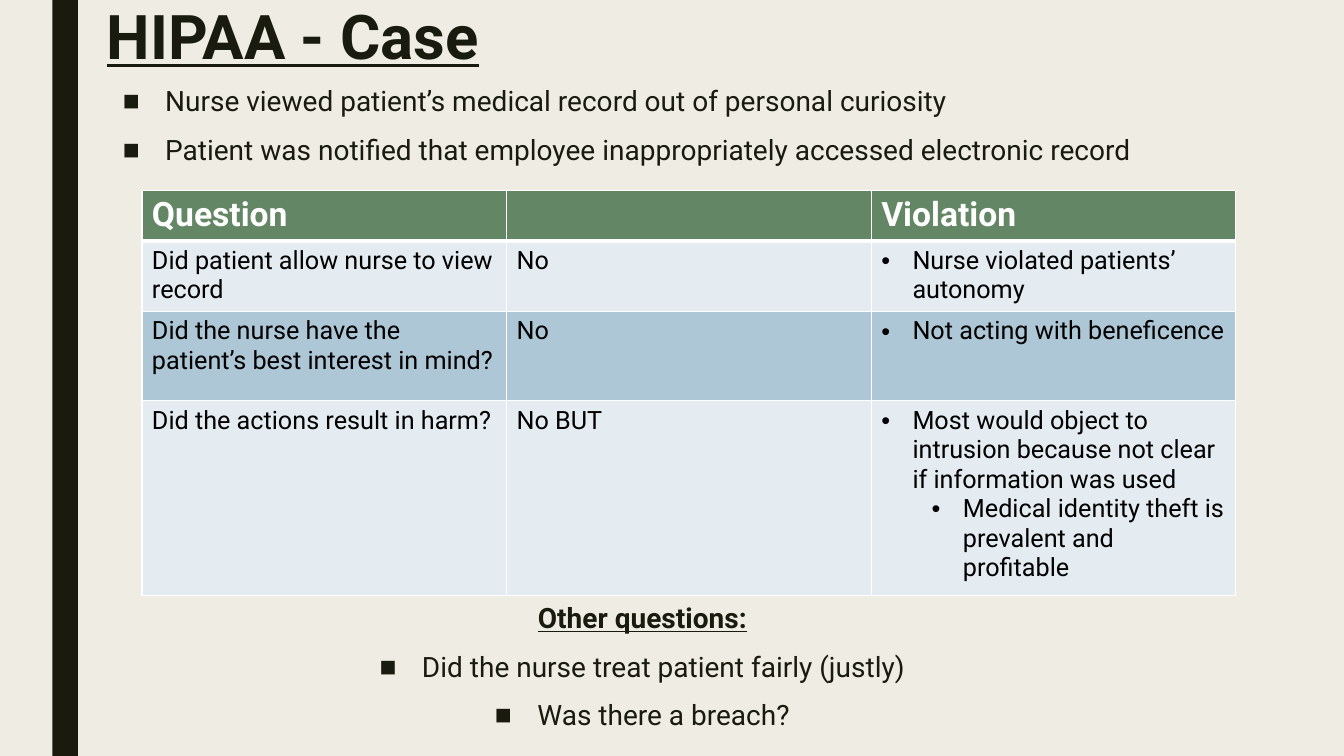
from lxml.etree import SubElement
from pptx import Presentation
from pptx.dml.color import RGBColor
from pptx.enum.shapes import MSO_SHAPE
from pptx.enum.text import PP_ALIGN
from pptx.oxml.ns import qn
from pptx.util import Emu, Inches, Pt

INK, PAPER, WHITE, BLACK = "191B0E", "EFEDE3", "FFFFFF", "000000"
GREEN, PALE, BLUE = "638764", "E4ECF1", "ADC7D6"


def colour(value):
    return RGBColor.from_string(value)


def write(paragraph, text, size=20, ink=INK, bold=False, underline=False,
          align=PP_ALIGN.LEFT, line=None, before=0, after=0,
          bullet=None, indent=0, hang=0):
    paragraph.alignment = align
    paragraph.line_spacing = line
    paragraph.space_before, paragraph.space_after = Pt(before), Pt(after)
    if bullet:
        properties = paragraph._p.get_or_add_pPr()
        properties.set("marL", str(Inches(indent)))
        properties.set("indent", str(-Inches(hang)))
        SubElement(properties, qn("a:buFont"), typeface="Arial")
        SubElement(properties, qn("a:buChar"), char=bullet)
    run = paragraph.add_run()
    run.text = text
    font = run.font
    font.name, font.size, font.bold, font.underline = "Roboto", Pt(size), bold, underline
    font.color.rgb = colour(ink)


class Page:
    def __init__(self, deck):
        self.deck = deck
        self.slide = deck.slides.add_slide(deck.slide_layouts[6])
        self.slide.background.fill.solid()
        self.slide.background.fill.fore_color.rgb = colour(PAPER)

    def across(self, percent):
        return Emu(round(self.deck.slide_width * percent / 100))

    def down(self, percent):
        return Emu(round(self.deck.slide_height * percent / 100))

    def area(self, left, top, width, height):
        return self.across(left), self.down(top), self.across(width), self.down(height)

    def bar(self, *area, fill):
        bar = self.slide.shapes.add_shape(MSO_SHAPE.RECTANGLE, *self.area(*area))
        bar.shadow.inherit = False
        bar.fill.solid()
        bar.fill.fore_color.rgb = colour(fill)
        bar.line.fill.background()

    def text(self, *area, lines):
        frame = self.slide.shapes.add_textbox(*self.area(*area)).text_frame
        frame.word_wrap = True
        self.fill_frame(frame, lines)

    def fill_frame(self, frame, lines):
        for index, (text, style) in enumerate(lines):
            paragraph = frame.add_paragraph() if index else frame.paragraphs[0]
            write(paragraph, text, **style)

    def border(self, cell, side, width):
        edge = SubElement(cell._tc.get_or_add_tcPr(), qn(f"a:ln{side}"), w=str(Pt(width)))
        SubElement(SubElement(edge, qn("a:solidFill")), qn("a:srgbClr"), val=WHITE)

    def table(self, *area, heights, rows, fills):
        table = self.slide.shapes.add_table(
            len(rows), len(rows[0]), *self.area(*area)).table
        table.horz_banding = False
        for r, (row, height, fill) in enumerate(zip(rows, heights, fills)):
            table.rows[r].height = self.down(height)
            for c, lines in enumerate(row):
                cell = table.cell(r, c)
                for side in "LRTB":
                    heavy = (r, side) in ((0, "B"), (1, "T"))
                    self.border(cell, side, 3 if heavy else 1)
                cell.fill.solid()
                cell.fill.fore_color.rgb = colour(fill)
                self.fill_frame(cell.text_frame, lines)


def main():
    deck = Presentation()
    deck.slide_width, deck.slide_height = Inches(13.33), Inches(7.5)
    page = Page(deck)

    spaced = dict(line=0.94, before=10, after=2)
    point = dict(spaced, bullet="■", indent=0.42, hang=0.42)
    centred = dict(align=PP_ALIGN.CENTER)
    head = dict(size=24, ink=WHITE, bold=True)
    plain = dict(size=18, ink=BLACK)
    finding = dict(plain, bullet="•", indent=0.31, hang=0.31)
    detail = dict(finding, indent=0.81)

    page.bar(3.9, 0, 1.9, 100, fill=INK)
    page.text(7.2, 0.2, 78.8, 10, lines=[
        ("HIPAA - Case", dict(size=44, bold=True, underline=True, line=0.89))])
    page.text(8.4, 10.8, 78.8, 13, lines=[
        ("Nurse viewed patient’s medical record out of personal curiosity", point),
        ("Patient was notified that employee inappropriately accessed electronic record",
         point)])
    page.table(
        10.56, 25.2, 81.4, 53.2,
        heights=[6.4, 9.2, 11.8, 25.8],
        fills=[GREEN, PALE, BLUE, PALE],
        rows=[
            [[("Question", head)], [], [("Violation", head)]],
            [[("Did patient allow nurse to view record", plain)],
             [("No", plain)],
             [("Nurse violated patients’ autonomy", finding)]],
            [[("Did the nurse have the patient’s best interest in mind?", plain)],
             [("No", plain)],
             [("Not acting with beneficence", finding)]],
            [[("Did the actions result in harm?", plain)],
             [("No BUT", plain)],
             [("Most would object to intrusion because not clear if information was used",
               finding),
              ("Medical identity theft is prevalent and profitable", detail)]],
        ])
    page.text(8.4, 79.2, 78.8, 20, lines=[
        ("Other questions:", dict(spaced, bold=True, underline=True, **centred)),
        ("Did the nurse treat patient fairly (justly)", dict(point, **centred)),
        ("Was there a breach?", dict(point, **centred))])

    deck.save("out.pptx")


if __name__ == "__main__":
    main()
